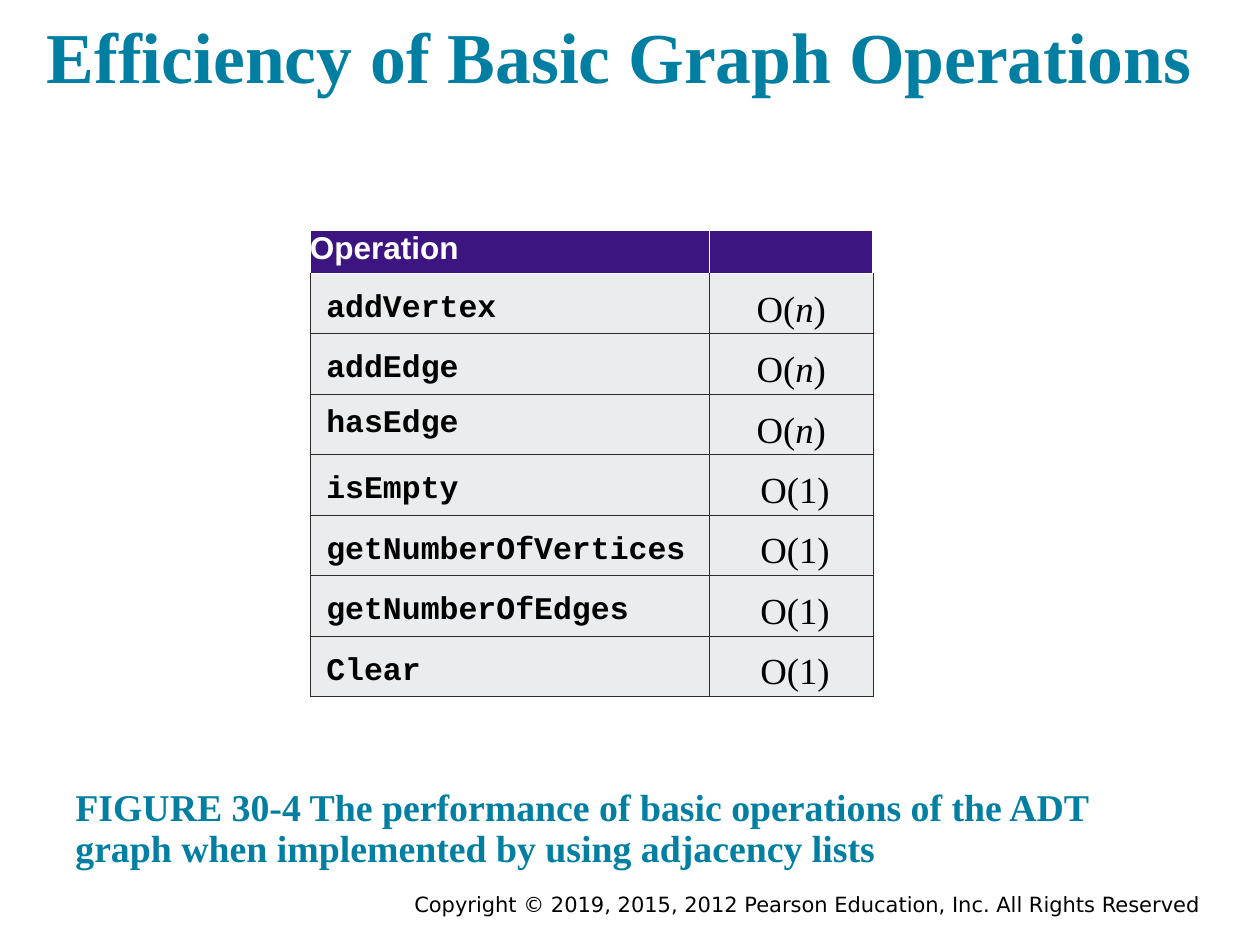
import pptx
import pptx.util
import pptx.dml.color
import pptx.enum.text
import pptx.oxml
import pptx.oxml.ns

Inches = pptx.util.Inches
Pt = pptx.util.Pt
ALIGN = pptx.enum.text.PP_ALIGN
ANCHOR = pptx.enum.text.MSO_ANCHOR

HUES = {"teal": "007FA3", "head": "3C1581", "cell": "EBECED",
        "rule": "2F2A2B", "white": "FFFFFF", "black": "000000"}
SERIF, MONO, SANS = "Times New Roman", "Courier New", "Arial"
COSTS = [("addVertex", "n"), ("addEdge", "n"), ("hasEdge", "n"),
         ("isEmpty", "1"), ("getNumberOfVertices", "1"),
         ("getNumberOfEdges", "1"), ("Clear", "1")]


class Deck:
    """Holds the style and the current slide, and draws each kind of element."""

    def __init__(self):
        self.show = pptx.Presentation()
        self.show.slide_width = Inches(10)
        self.show.slide_height = Inches(7.5)
        self.slide = self.show.slides.add_slide(self.show.slide_layouts[5])

    def tint(self, name):
        return pptx.dml.color.RGBColor.from_string(HUES[name])

    def style(self, para, face, size, hue, bold=False, align=ALIGN.LEFT, lead=1.0):
        para.alignment = align
        para.line_spacing = lead
        font = para.font
        font.name, font.size, font.bold = face, Pt(size), bold
        font.color.rgb = self.tint(hue)

    def frame(self, shape, box, text, inset, anchor, *look, **more):
        shape.left, shape.top, shape.width, shape.height = map(Inches, box)
        body = shape.text_frame
        body.word_wrap = True
        body.auto_size = pptx.enum.text.MSO_AUTO_SIZE.NONE
        body.vertical_anchor = anchor
        body.margin_left = body.margin_right = Inches(inset)
        body.margin_top = body.margin_bottom = Inches(inset)
        body.text = text
        self.style(body.paragraphs[0], *look, **more)

    def title(self, box, text, *look, **more):
        self.frame(self.slide.shapes.title, box, text, 0.1, ANCHOR.BOTTOM, *look, **more)

    def label(self, box, text, inset, anchor, *look, **more):
        shape = self.slide.shapes.add_textbox(*map(Inches, box))
        self.frame(shape, box, text, inset, anchor, *look, **more)

    def edge(self, cell, sides, hue, width):
        props = cell._tc.get_or_add_tcPr()
        for spot, side in enumerate(sides):
            props.insert(spot, pptx.oxml.parse_xml(
                f'<a:ln{side} {pptx.oxml.ns.nsdecls("a")} w="{Pt(width)}"><a:solidFill>'
                f'<a:srgbClr val="{HUES[hue]}"/></a:solidFill></a:ln{side}>'))

    def cell(self, cell, parts, fill, side, *look, indent=0, **more):
        cell.fill.solid()
        cell.fill.fore_color.rgb = self.tint(fill)
        cell.margin_left = cell.margin_right = Inches(side)
        cell.margin_top = cell.margin_bottom = 0
        para = cell.text_frame.paragraphs[0]
        para._p.get_or_add_pPr().set("marL", str(Inches(indent)))
        self.style(para, *look, **more)
        for part in parts:
            run = para.add_run()
            run.text = part
            if part == "n":
                run.font.italic = True

    def table(self, left, top, cols, head, tall, costs):
        rows = [head] + [tall] * len(costs)
        grid = self.slide.shapes.add_table(
            len(rows), len(cols), Inches(left), Inches(top),
            Inches(sum(cols)), Inches(sum(rows))).table
        grid.first_row = grid.horz_banding = False
        for col, width in zip(grid.columns, cols):
            col.width = Inches(width)
        for row, height in zip(grid.rows, rows):
            row.height = Inches(height)
        for col, parts in enumerate((["Operation"], [])):
            cell = grid.cell(0, col)
            self.cell(cell, parts, "head", 0, SANS, 18, "white", bold=True)
            self.edge(cell, "LRT", "white", 1)
        for row, (name, cost) in enumerate(costs, 1):
            left, right = grid.cell(row, 0), grid.cell(row, 1)
            lead = 1.0 if name == "hasEdge" else 1.3
            self.cell(left, [name], "cell", 0.07, MONO, 18, "black",
                      indent=0.06, bold=True, lead=lead)
            parts = ["O(", "n", ")"] if cost == "n" else ["O(1)"]
            self.cell(right, parts, "cell", 0.07, SERIF, 21, "black",
                      indent=0 if cost == "n" else 0.06, align=ALIGN.CENTER, lead=1.3)
            for cell in (left, right):
                cell.vertical_anchor = ANCHOR.MIDDLE
                self.edge(cell, "LRTB", "rule", 0.5)


def main():
    deck = Deck()
    deck.title((0.27, 0, 9.31, 0.88), "Efficiency of Basic Graph Operations",
               SERIF, 40.9, "teal", bold=True)
    deck.table(2.46, 1.83, (3.17, 1.3), 0.34, 0.48, COSTS)
    deck.label((0.5, 6.13, 9, 0.88),
               "FIGURE 30-4 The performance of basic operations of the ADT graph "
               "when implemented by using adjacency lists",
               0.1, ANCHOR.BOTTOM, SERIF, 21.6, "teal", bold=True, lead=0.9)
    deck.label((1.75, 7.03, 7.83, 0.31),
               "Copyright © 2019, 2015, 2012 Pearson Education, Inc. All Rights Reserved",
               0.05, ANCHOR.TOP, "DejaVu Sans", 12, "black", align=ALIGN.RIGHT)
    deck.show.save("out.pptx")


if __name__ == "__main__":
    main()
